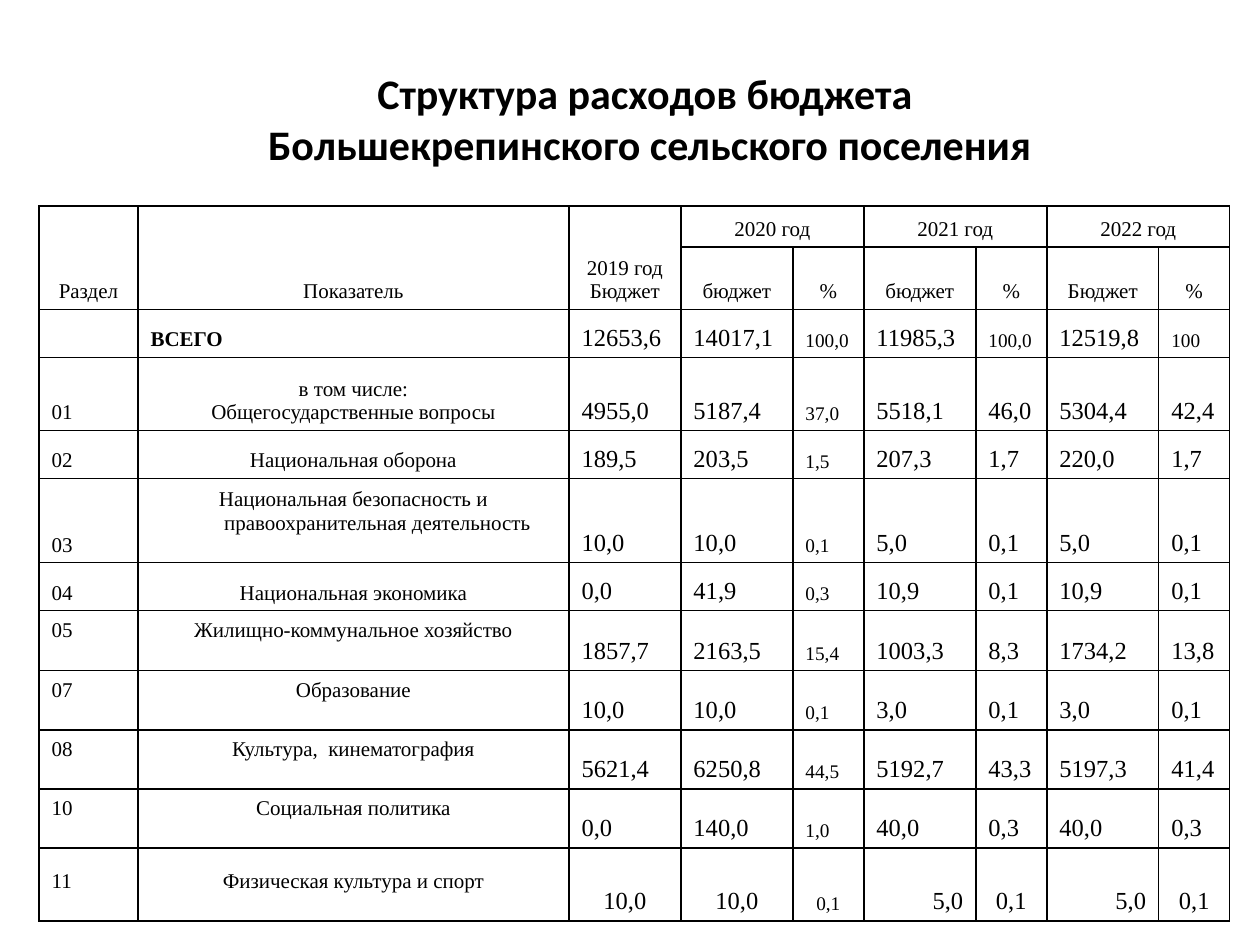
from dataclasses import dataclass

from lxml.etree import SubElement
from pptx import Presentation
from pptx.dml.color import RGBColor
from pptx.enum.text import MSO_ANCHOR, PP_ALIGN
from pptx.oxml.ns import qn
from pptx.table import Table, _Cell
from pptx.util import Emu, Pt

BLACK = RGBColor(0, 0, 0)
SERIF = "Times New Roman"
SANS = "Calibri"
LEFT, CENTER, RIGHT = PP_ALIGN.LEFT, PP_ALIGN.CENTER, PP_ALIGN.RIGHT
HANG = 48
LIFT = 28
WIDTHS = [99, 431, 112] + [112, 71] * 3


def px(n: int) -> Emu:
    return Emu(round(n * 914400 / 126))


@dataclass
class Line:
    code: str
    name: str
    values: str
    height: int
    raised: str = ""


@dataclass
class Style:
    size: int = 12
    align: PP_ALIGN = CENTER
    hang: bool = True
    bold: bool = False
    bottom: int = 6


LINES = [
    Line("", "ВСЕГО", "12653,6 14017,1 100,0 11985,3 100,0 12519,8 100", 48),
    Line("01", "в том числе:\nОбщегосударственные вопросы",
         "4955,0 5187,4 37,0 5518,1 46,0 5304,4 42,4", 73),
    Line("02", "Национальная оборона", "189,5 203,5 1,5 207,3 1,7 220,0 1,7", 48),
    Line("03", "Национальная безопасность и правоохранительная деятельность",
         "10,0 10,0 0,1 5,0 0,1 5,0 0,1", 82, "name"),
    Line("04", "Национальная экономика", "0,0 41,9 0,3 10,9 0,1 10,9 0,1", 48),
    Line("05", "Жилищно-коммунальное хозяйство",
         "1857,7 2163,5 15,4 1003,3 8,3 1734,2 13,8", 60, "code name"),
    Line("07", "Образование", "10,0 10,0 0,1 3,0 0,1 3,0 0,1", 59, "code name"),
    Line("08", "Культура,  кинематография",
         "5621,4 6250,8 44,5 5192,7 43,3 5197,3 41,4", 59, "code name"),
    Line("10", "Социальная политика", "0,0 140,0 1,0 40,0 0,3 40,0 0,3", 59, "code name"),
    Line("11", "Физическая культура и спорт",
         "10,0 10,0 0,1 5,0 0,1 5,0 0,1", 73, "code name"),
]
HEIGHTS = [41, 60] + [line.height for line in LINES]


def frame(cell: _Cell) -> None:
    props = cell._tc.get_or_add_tcPr()
    for tag in ("a:lnL", "a:lnR", "a:lnT", "a:lnB"):
        edge = SubElement(props, qn(tag), w=str(Pt(1)))
        fill = SubElement(edge, qn("a:solidFill"))
        SubElement(fill, qn("a:srgbClr"), val=str(BLACK))
    cell.fill.background()
    cell.margin_top = cell.margin_bottom = 0


def write(cell: _Cell, text: str, style: Style) -> None:
    if not text:
        return
    cell.vertical_anchor = MSO_ANCHOR.BOTTOM
    cell.margin_top, cell.margin_bottom = px(6), px(style.bottom)
    for i, part in enumerate(text.split("\n")):
        para = cell.text_frame.paragraphs[0] if i == 0 else cell.text_frame.add_paragraph()
        para.alignment = style.align
        if style.hang:
            props = para._p.get_or_add_pPr()
            props.set("marL", str(px(HANG)))
            props.set("indent", str(-px(HANG)))
        run = para.add_run()
        run.text = part
        run.font.name, run.font.size = SERIF, Pt(style.size)
        run.font.bold = style.bold
        run.font.color.rgb = BLACK


def head(table: Table) -> None:
    for col, text in enumerate(["Раздел", "Показатель", "2019 год\nБюджет"]):
        table.cell(0, col).merge(table.cell(1, col))
        write(table.cell(0, col), text, Style())
    for i, (year, label) in enumerate([(2020, "бюджет"), (2021, "бюджет"), (2022, "Бюджет")]):
        col = 3 + 2 * i
        table.cell(0, col).merge(table.cell(0, col + 1))
        write(table.cell(0, col), f"{year} год", Style())
        write(table.cell(1, col), label, Style())
        write(table.cell(1, col + 1), "%", Style())


def fill(table: Table, row: int, line: Line) -> None:
    total, last = line is LINES[0], line is LINES[-1]
    low = {key: LIFT if key in line.raised else 6 for key in ("code", "name")}
    write(table.cell(row, 0), line.code, Style(align=LEFT, bottom=low["code"]))
    write(table.cell(row, 1), line.name,
          Style(align=LEFT if total else CENTER, bold=total, bottom=low["name"]))
    for col, value in enumerate(line.values.split(), 2):
        small = col == 4 or total and col in (6, 8)
        align = LEFT if not last else RIGHT if col in (5, 7) else CENTER
        write(table.cell(row, col), value, Style(11 if small else 14, align, last))


def title(slide) -> None:
    box = slide.shapes.add_textbox(px(78), px(39), px(1134), px(158)).text_frame
    box.word_wrap = True
    box.vertical_anchor = MSO_ANCHOR.MIDDLE
    para = box.paragraphs[0]
    para.alignment = CENTER
    for i, text in enumerate(["Структура расходов бюджета",
                              " Большекрепинского сельского поселения"]):
        if i:
            para.add_line_break()
        run = para.add_run()
        run.text = text
        run.font.name, run.font.size, run.font.bold = SANS, Pt(24), True
        run.font.color.rgb = BLACK


def main() -> None:
    deck = Presentation()
    deck.slide_width, deck.slide_height = px(1260), px(945)
    slide = deck.slides.add_slide(deck.slide_layouts[6])
    title(slide)
    table = slide.shapes.add_table(len(HEIGHTS), len(WIDTHS), px(39), px(206),
                                   px(sum(WIDTHS)), px(sum(HEIGHTS))).table
    table.first_row = table.horz_banding = False
    for col, width in zip(table.columns, WIDTHS):
        col.width = px(width)
    for row, height in zip(table.rows, HEIGHTS):
        row.height = px(height)
    for cell in table.iter_cells():
        frame(cell)
    head(table)
    for row, line in enumerate(LINES, 2):
        fill(table, row, line)
    deck.save("out.pptx")


if __name__ == "__main__":
    main()
